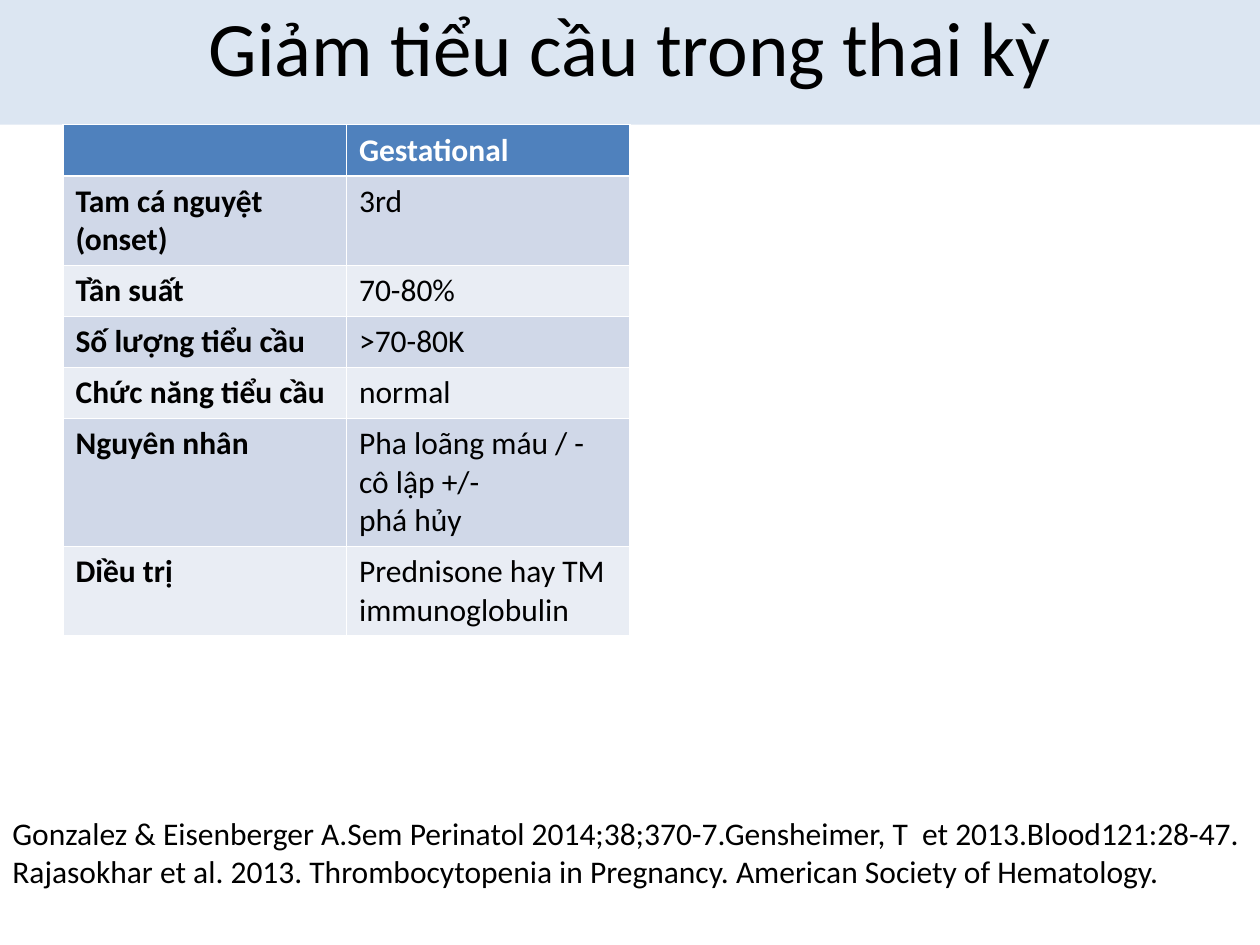
from pptx import Presentation
from pptx.dml.color import RGBColor
from pptx.enum import text
from pptx.util import Pt

FONT = "Calibri"
BLACK = RGBColor(0x00, 0x00, 0x00)
WHITE = RGBColor(0xFF, 0xFF, 0xFF)
PALE_BLUE = RGBColor(0xDC, 0xE6, 0xF2)
HEADER_BLUE = RGBColor(0x4F, 0x81, 0xBD)
BANDS = (RGBColor(0xE9, 0xED, 0xF4), RGBColor(0xD0, 0xD8, 0xE8))

TITLE = "Giảm tiểu cầu trong thai kỳ"
ROWS = [
    ("", "Gestational"),
    ("Tam cá nguyệt\n(onset)", "3rd"),
    ("Tần suất", "70-80%"),
    ("Số lượng tiểu cầu", ">70-80K"),
    ("Chức năng tiểu cầu", "normal"),
    ("Nguyên nhân", "Pha loãng máu / -\ncô lập +/-\nphá hủy"),
    ("Diều trị", "Prednisone hay TM\nimmunoglobulin"),
]
SOURCES = (
    "Gonzalez & Eisenberger A.Sem Perinatol 2014;38;370-7."
    "Gensheimer, T  et 2013.Blood121:28-47. "
    "Rajasokhar et al. 2013. Thrombocytopenia in Pregnancy. "
    "American Society of Hematology."
)


def write(tf, words, color=BLACK, **formats):
    """Fill a text frame and format every run."""
    tf.text = words
    formats = {"name": FONT, "size": Pt(18), **formats}
    for p in tf.paragraphs:
        for r in p.runs:
            r.font.color.rgb = color
            for key, value in formats.items():
                setattr(r.font, key, value)


def add_title(s, left, top, width, height):
    sp = s.shapes.title
    box = {"left": left, "top": top, "width": width, "height": height}
    for key, value in box.items():
        setattr(sp, key, Pt(value))
    sp.fill.solid()
    sp.fill.fore_color.rgb = PALE_BLUE
    tf = sp.text_frame
    tf.vertical_anchor = text.MSO_ANCHOR.MIDDLE
    write(tf, TITLE, size=Pt(44))
    tf.paragraphs[0].alignment = text.PP_ALIGN.CENTER


def add_facts_table(s, left, top, width, row_height):
    columns = len(ROWS[0])
    table = s.shapes.add_table(
        len(ROWS), columns, Pt(left), Pt(top),
        Pt(width), Pt(row_height * len(ROWS))).table
    for column in table.columns:
        column.width = Pt(width / columns)
    for i, row in enumerate(ROWS):
        table.rows[i].height = Pt(row_height)
        for j, words in enumerate(row):
            cell = table.cell(i, j)
            cell.fill.solid()
            cell.fill.fore_color.rgb = BANDS[i % 2] if i else HEADER_BLUE
            write(cell.text_frame, words, BLACK if i else WHITE,
                  bold=i == 0 or j == 0)


def add_sources(s, left, top, width, height):
    sp = s.shapes.add_textbox(Pt(left), Pt(top), Pt(width), Pt(height))
    tf = sp.text_frame
    tf.word_wrap = True
    tf.auto_size = text.MSO_AUTO_SIZE.SHAPE_TO_FIT_TEXT
    write(tf, SOURCES)


def main():
    prs = Presentation()
    prs.slide_width, prs.slide_height = Pt(720), Pt(540)
    s = prs.slides.add_slide(prs.slide_layouts[5])

    # Title band across the top
    add_title(s, 0, -18.75, 720, 90)
    # Table of features, directly below the band
    add_facts_table(s, 36, 71.25, 324, 29.2)
    # References at the bottom
    add_sources(s, 0, 461.5, 720, 51)

    prs.save("out.pptx")


if __name__ == "__main__":
    main()
